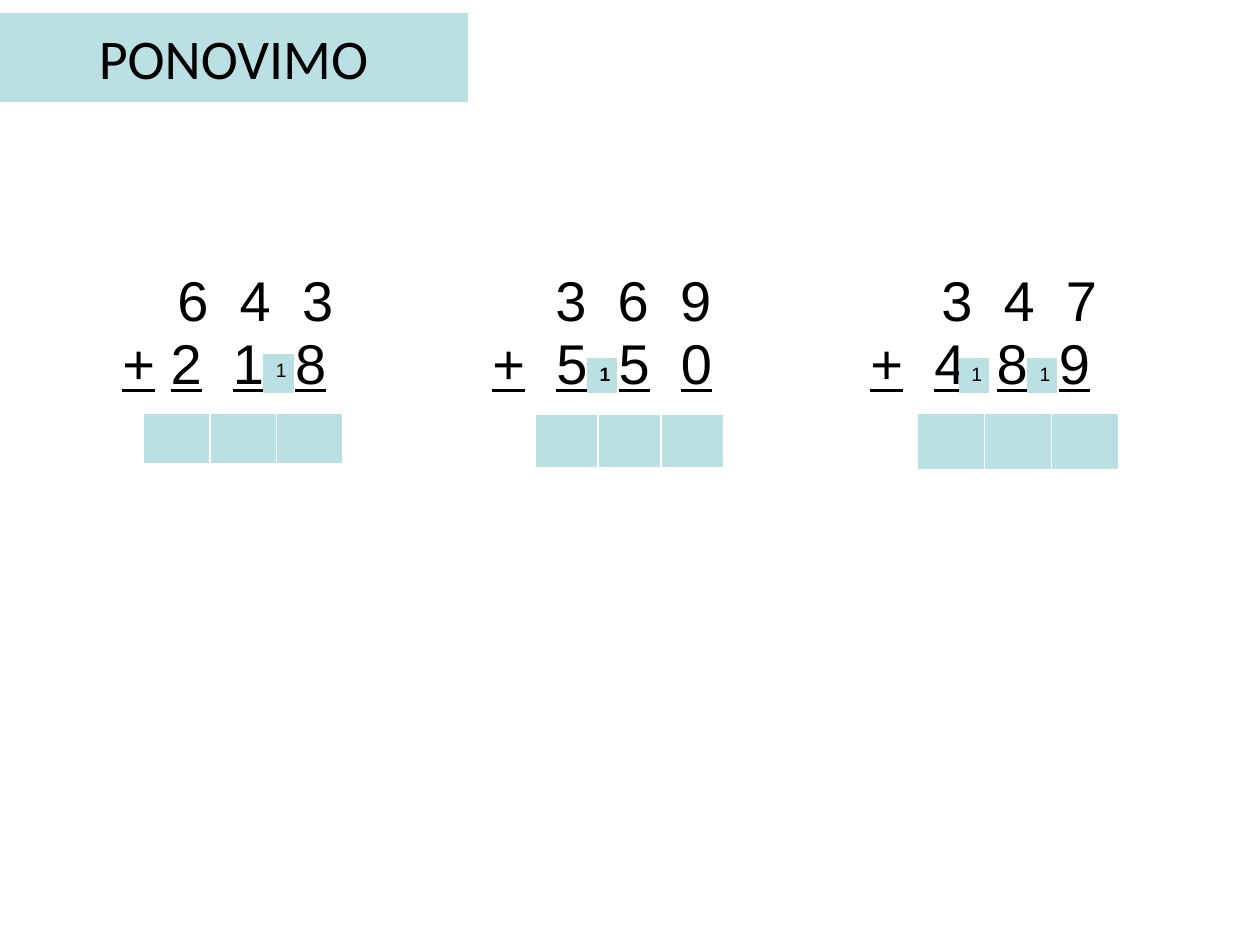
from lxml import etree
from pptx import Presentation
from pptx.dml.color import RGBColor
from pptx.enum import shapes, text
from pptx.oxml.ns import qn
from pptx.util import Pt

TEAL, WHITE, BLACK = "BBE0E3", "FFFFFF", "000000"
PLAIN_TABLE = "{2D5ABB26-0587-4C30-8999-92F81FD0307C}"
DIGIT_PITCH = 35.6
# (cell inset, first digit offset on top, first digit offset below, top digits, bottom digits)
SUMS = [
    (49.7, 31.5, 27.6, "643", "218"),
    (45.2, 36, 36.5, "369", "550"),
    (45.2, 40.5, 36.5, "347", "489"),
]
CARRIES = [
    ((150.5, 202.3, 16.6, 22.3), False),
    ((335.5, 204.5, 16.6, 20), True),
    ((586.8, 204.5, 16.6, 20), False),
    ((547.9, 204.5, 16.6, 20), False),
]
ANSWERS = [
    (82.1, 236.2, 113.8, 29.5),
    (305.7, 236.9, 108, 31.4),
    (524.2, 236.2, 115.2, 33.1),
]


def color(value):
    """Turn a hex string into a colour."""
    return RGBColor.from_string(value)


def style_font(paragraph, size, name="Arial", bold=False, underline=False):
    """Set the font of a whole paragraph."""
    font = paragraph.font
    font.size, font.name = Pt(size), name
    font.bold, font.underline = bold, underline
    font.color.rgb = color(BLACK)


def add_tab_stops(paragraph, first):
    """Add one tab stop for each of the three digits."""
    stops = etree.SubElement(paragraph._p.get_or_add_pPr(), qn("a:tabLst"))
    for index in range(3):
        position = Pt(first + index * DIGIT_PITCH)
        etree.SubElement(stops, qn("a:tab"), pos=str(int(position)), algn="l")


def add_borders(cell):
    """Draw white borders round a cell, heavier at the bottom."""
    properties = cell._tc.get_or_add_tcPr()
    for side, width in (("lnL", 1), ("lnR", 1), ("lnT", 1), ("lnB", 3)):
        line = etree.SubElement(properties, qn(f"a:{side}"), w=str(int(Pt(width))))
        fill = etree.SubElement(line, qn("a:solidFill"))
        etree.SubElement(fill, qn("a:srgbClr"), val=WHITE)


def add_row(page, box, columns):
    """Add an unstyled table of one row and return its cells."""
    table = page.shapes.add_table(1, columns, *map(Pt, box)).table
    table.first_row = table.horz_banding = False
    table._tbl.tblPr.find(qn("a:tableStyleId")).text = PLAIN_TABLE
    return [table.cell(0, column) for column in range(columns)]


def fill_cell(cell):
    """Fill a cell with the slide's teal."""
    cell.fill.solid()
    cell.fill.fore_color.rgb = color(TEAL)


def add_title(page, box, words):
    """Place the title band."""
    band = page.shapes.add_shape(shapes.MSO_SHAPE.RECTANGLE, *map(Pt, box))
    band.shadow.inherit = False
    band.fill.solid()
    band.fill.fore_color.rgb = color(TEAL)
    band.line.color.rgb = color(TEAL)
    band.line.width = Pt(0.75)
    band.text_frame.vertical_anchor = text.MSO_ANCHOR.MIDDLE
    paragraph = band.text_frame.paragraphs[0]
    paragraph.text = words
    paragraph.alignment = text.PP_ALIGN.CENTER
    style_font(paragraph, 32, "Calibri")


def add_sums(page, box):
    """Place the three written additions side by side."""
    for cell, (inset, first, second, top, bottom) in zip(add_row(page, box, len(SUMS)), SUMS):
        cell.fill.background()
        cell.margin_left, cell.margin_right = Pt(inset), Pt(0)
        upper = cell.text_frame.paragraphs[0]
        lower = cell.text_frame.add_paragraph()
        for paragraph, sign, digits, offset in (
            (upper, "", top, first),
            (lower, "+", bottom, second),
        ):
            paragraph.add_run().text = "\t".join([sign, *digits])
            paragraph.alignment = text.PP_ALIGN.LEFT
            add_tab_stops(paragraph, offset)
            style_font(paragraph, 32, underline=paragraph is lower)


def add_carry(page, box, bold):
    """Place a small carried one."""
    cell = add_row(page, box, 1)[0]
    fill_cell(cell)
    paragraph = cell.text_frame.paragraphs[0]
    paragraph.text = "1"
    style_font(paragraph, 11, bold=bold)


def add_answer(page, box):
    """Place three empty answer cells."""
    for cell in add_row(page, box, 3):
        add_borders(cell)
        fill_cell(cell)


def main():
    """Build and save the slide."""
    deck = Presentation()
    deck.slide_width, deck.slide_height = Pt(720), Pt(540)
    page = deck.slides.add_slide(deck.slide_layouts[6])
    add_title(page, (0, 8, 267, 49.7), "PONOVIMO")
    add_sums(page, (20.2, 151.2, 648, 238.3))
    for box, bold in CARRIES:
        add_carry(page, box, bold)
    for box in ANSWERS:
        add_answer(page, box)
    deck.save("out.pptx")


if __name__ == "__main__":
    main()
